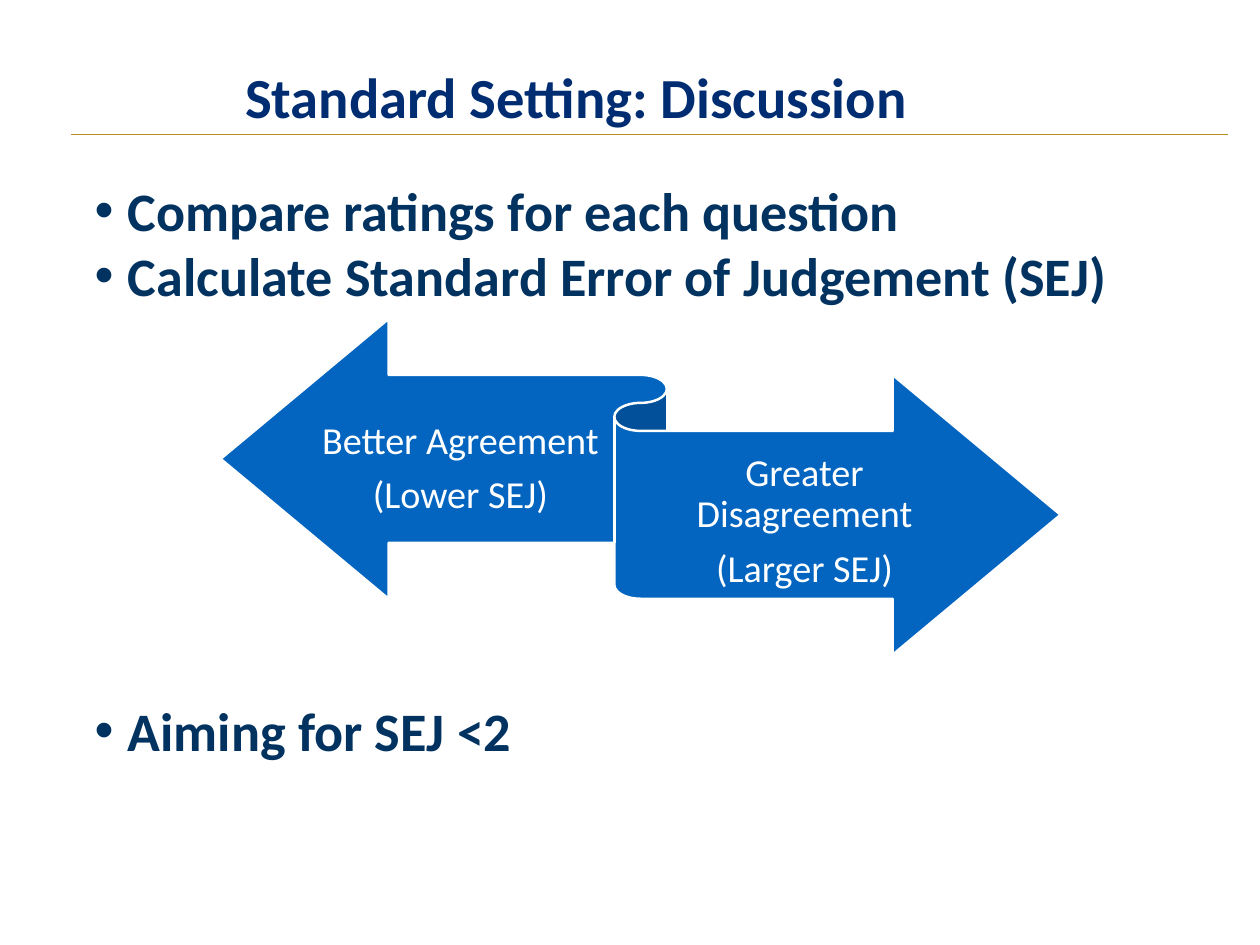
from dataclasses import dataclass

from lxml import etree
from pptx import Presentation
from pptx.dml.color import RGBColor
from pptx.enum import shapes, text
from pptx.oxml import ns
from pptx.util import Pt


@dataclass(frozen=True)
class Theme:
    font: str = "Calibri"
    title: RGBColor = RGBColor(0x00, 0x2D, 0x72)
    body: RGBColor = RGBColor(0x01, 0x32, 0x60)
    rule: RGBColor = RGBColor(0xB8, 0x8F, 0x20)
    ribbon: RGBColor = RGBColor(0x03, 0x65, 0xC0)
    white: RGBColor = RGBColor(0xFF, 0xFF, 0xFF)
    title_size: int = 46
    body_size: int = 44
    label_size: int = 31


THEME = Theme()


def set_font(paragraph, size, color, bold):
    font = paragraph.font
    font.name = THEME.font
    font.size = Pt(size)
    font.bold = bold
    font.color.rgb = color


def set_frame(frame, anchor, top=0, bottom=0, side=0):
    frame.word_wrap = True
    frame.auto_size = text.MSO_AUTO_SIZE.NONE
    frame.vertical_anchor = anchor
    frame.margin_left = frame.margin_right = Pt(side)
    frame.margin_top, frame.margin_bottom = Pt(top), Pt(bottom)


def add_lines(frame, lines):
    for index, line in enumerate(lines):
        paragraph = frame.paragraphs[0] if index == 0 else frame.add_paragraph()
        paragraph.text = line
        yield paragraph


def add_title(slide, wording):
    title = slide.shapes.title
    title.left, title.top, title.width, title.height = Pt(56), Pt(0), Pt(824), Pt(105)
    set_frame(title.text_frame, text.MSO_ANCHOR.BOTTOM)
    for paragraph in add_lines(title.text_frame, [wording]):
        paragraph.alignment = text.PP_ALIGN.CENTER
        paragraph.line_spacing = 0.8
        set_font(paragraph, THEME.title_size, THEME.title, True)


def add_rule(slide, left, right, top):
    rule = slide.shapes.add_connector(
        shapes.MSO_CONNECTOR.STRAIGHT, Pt(left), Pt(top), Pt(right), Pt(top)
    )
    rule.line.color.rgb = THEME.rule
    rule.line.width = Pt(1)
    etree.SubElement(rule._element.spPr, ns.qn("a:effectLst"))


def add_bullets(slide, top, height, lines):
    box = slide.shapes.add_textbox(Pt(69.8), Pt(top), Pt(901.4), Pt(height))
    set_frame(box.text_frame, text.MSO_ANCHOR.TOP, top=3.6, bottom=3.6, side=7.2)
    for paragraph in add_lines(box.text_frame, lines):
        properties = paragraph._p.get_or_add_pPr()
        properties.set("marL", str(Pt(27)))
        properties.set("indent", str(-Pt(27)))
        bullet_font = etree.SubElement(properties, ns.qn("a:buFont"))
        bullet_font.set("typeface", "Arial")
        etree.SubElement(properties, ns.qn("a:buChar")).set("char", "•")
        set_font(paragraph, THEME.body_size, THEME.body, True)


def add_ribbon(slide):
    ribbon = slide.shapes.add_shape(
        shapes.MSO_SHAPE.LEFT_RIGHT_RIBBON, Pt(179.3), Pt(259.2), Pt(682.6), Pt(272.9)
    )
    ribbon.shadow.inherit = False
    ribbon.fill.solid()
    ribbon.fill.fore_color.rgb = THEME.ribbon
    ribbon.line.color.rgb = THEME.white
    ribbon.line.width = Pt(2)


def add_ribbon_label(slide, left, top, width, lines):
    box = slide.shapes.add_textbox(Pt(left), Pt(top), Pt(width), Pt(134))
    set_frame(box.text_frame, text.MSO_ANCHOR.MIDDLE, top=8.6, bottom=9.4)
    for paragraph in add_lines(box.text_frame, lines):
        paragraph.alignment = text.PP_ALIGN.CENTER
        paragraph.line_spacing = 0.9
        paragraph.space_after = Pt(10.8)
        set_font(paragraph, THEME.label_size, THEME.white, False)


def main():
    presentation = Presentation()
    presentation.slide_width, presentation.slide_height = Pt(1024), Pt(768)
    slide = presentation.slides.add_slide(presentation.slide_layouts[5])
    add_rule(slide, left=57.6, right=998, top=109.4)
    add_title(slide, "Standard Setting: Discussion")
    add_bullets(slide, 140.4, 116, [
        "Compare ratings for each question",
        "Calculate Standard Error of Judgement (SEJ)",
    ])
    add_bullets(slide, 563, 62, ["Aiming for SEJ <2"])
    add_ribbon(slide)
    add_ribbon_label(slide, 261.4, 314.6, 225.4, ["Better Agreement", "(Lower SEJ)"])
    add_ribbon_label(slide, 520.6, 357.8, 266.4, ["Greater Disagreement", "(Larger SEJ)"])
    presentation.save("out.pptx")


if __name__ == "__main__":
    main()
